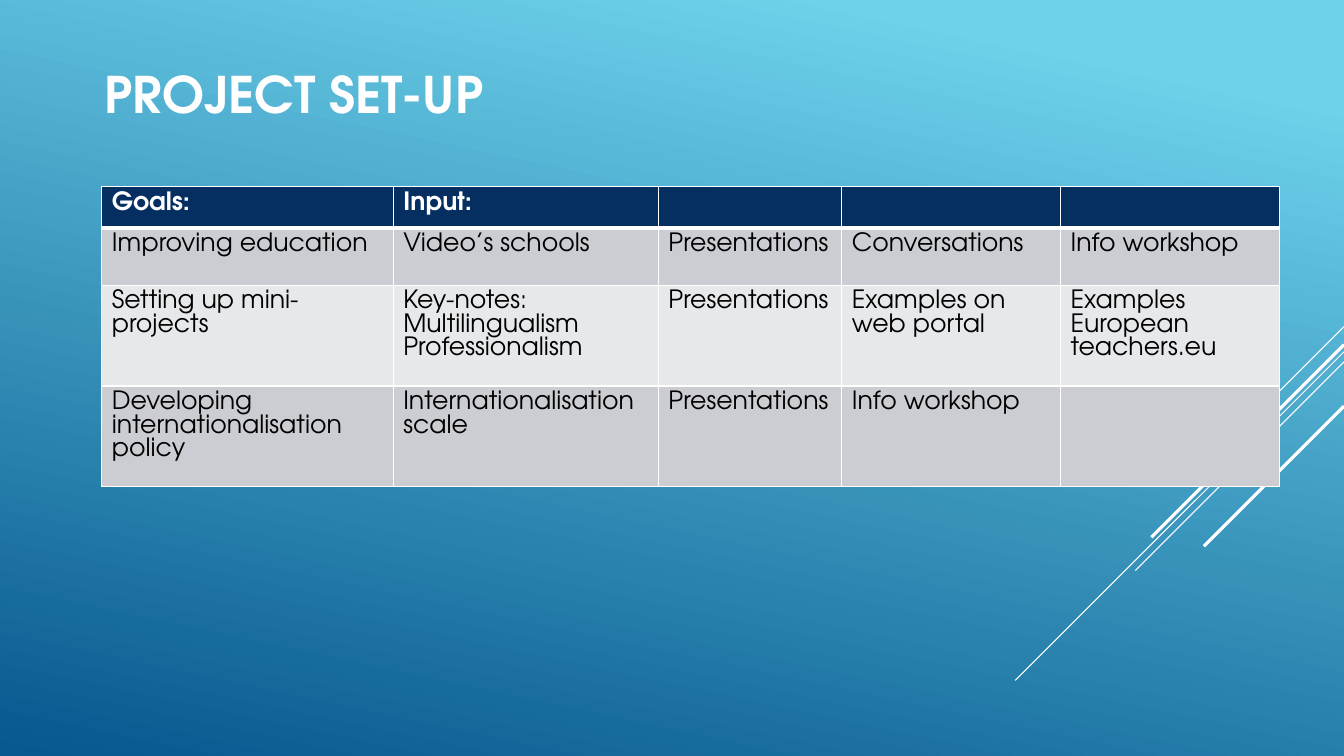
from lxml import etree
from pptx import Presentation
from pptx.dml.color import RGBColor
from pptx.enum.shapes import MSO_CONNECTOR
from pptx.enum.text import MSO_ANCHOR
from pptx.oxml.ns import qn
from pptx.util import Inches, Pt

STRAIGHT = MSO_CONNECTOR.STRAIGHT
MIDDLE = MSO_ANCHOR.MIDDLE
FONT = "TeX Gyre Adventor"
WHITE, BLACK, NAVY = "FFFFFF", "000000", "052F61"
BANDS = ("CCCDD2", "E7E8EA")
SLIDE_WIDTH, SLIDE_HEIGHT = 13.33, 7.5

GOALS = [
    ["Goals:", "Input:", "", "", ""],
    ["Improving education", "Video’s schools", "Presentations", "Conversations", "Info workshop"],
    ["Setting up mini-projects", "Key-notes:\nMultilingualism\nProfessionalism", "Presentations",
     "Examples on web portal", "Examples European teachers.eu"],
    ["Developing internationalisation policy", "Internationalisation scale", "Presentations",
     "Info workshop", ""],
]
COLUMN_WIDTHS = [2.89, 2.63, 1.82, 2.17, 2.17]
ROW_HEIGHTS = [0.41, 0.57, 0.8, 0.8]
DIAGONALS = [
    (3.24, 1.0, 0.75),
    (3.49, 3.26, 0.75),
    (3.59, 2.07, 0.75),
    (3.42, 1.91, 2.25),
    (4.03, 1.39, 2.25),
]


def rgb(value):
    return RGBColor.from_string(value)


def write(frame, text, size=18, color=BLACK, bold=False):
    frame.word_wrap = True
    frame.text = text
    for paragraph in frame.paragraphs:
        font = paragraph.font
        font.name, font.size, font.bold = FONT, Pt(size), bold
        font.color.rgb = rgb(color)


class Deck:
    def __init__(self):
        self.presentation = Presentation()
        self.presentation.slide_width = Inches(SLIDE_WIDTH)
        self.presentation.slide_height = Inches(SLIDE_HEIGHT)
        self.slide = self.presentation.slides.add_slide(self.presentation.slide_layouts[6])

    def background(self, stops, angle):
        fill = self.slide.background.fill
        fill.gradient()
        fill.gradient_angle = angle
        for stop, (position, color) in zip(fill.gradient_stops, stops):
            stop.position = position
            stop.color.rgb = rgb(color)

    def diagonal(self, top, span, width):
        line = self.slide.shapes.add_connector(
            STRAIGHT, Inches(SLIDE_WIDTH), Inches(top),
            Inches(SLIDE_WIDTH - span), Inches(top + span))
        line.line.color.rgb = rgb(WHITE)
        line.line.width = Pt(width)
        etree.SubElement(line._element.spPr, qn("a:effectLst"))

    def title(self, text, left, top, width, height):
        box = self.slide.shapes.add_textbox(
            Inches(left), Inches(top), Inches(width), Inches(height))
        box.text_frame.vertical_anchor = MIDDLE
        write(box.text_frame, text, size=36, color=WHITE, bold=True)

    def borders(self, cell, **widths):
        properties = cell._tc.get_or_add_tcPr()
        for side in "LRTB":
            edge = etree.SubElement(properties, qn(f"a:ln{side}"), w=str(Pt(widths.get(side, 1))))
            fill = etree.SubElement(edge, qn("a:solidFill"))
            etree.SubElement(fill, qn("a:srgbClr"), val=WHITE)

    def table(self, rows, left, top, widths, heights):
        table = self.slide.shapes.add_table(
            len(rows), len(widths), Inches(left), Inches(top),
            Inches(sum(widths)), Inches(sum(heights))).table
        table.horz_banding = False
        for column, width in zip(table.columns, widths):
            column.width = Inches(width)
        for index, (row, height, texts) in enumerate(zip(table.rows, heights, rows)):
            row.height = Inches(height)
            header = index == 0
            for cell, text in zip(row.cells, texts):
                self.borders(cell, B=3 if header else 1, T=3 if index == 1 else 1)
                cell.fill.solid()
                cell.fill.fore_color.rgb = rgb(NAVY if header else BANDS[(index - 1) % 2])
                write(cell.text_frame, text, color=WHITE if header else BLACK, bold=header)


def main():
    deck = Deck()
    deck.background([(0.1, "6ED2EB"), (1, "06588E")], 258)
    for top, span, width in DIAGONALS:
        deck.diagonal(top, span, width)
    deck.title("PROJECT SET-UP", 0.94, 0.1, 9.33, 1.65)
    deck.table(GOALS, 1.01, 1.85, COLUMN_WIDTHS, ROW_HEIGHTS)
    deck.presentation.save("out.pptx")


if __name__ == "__main__":
    main()
